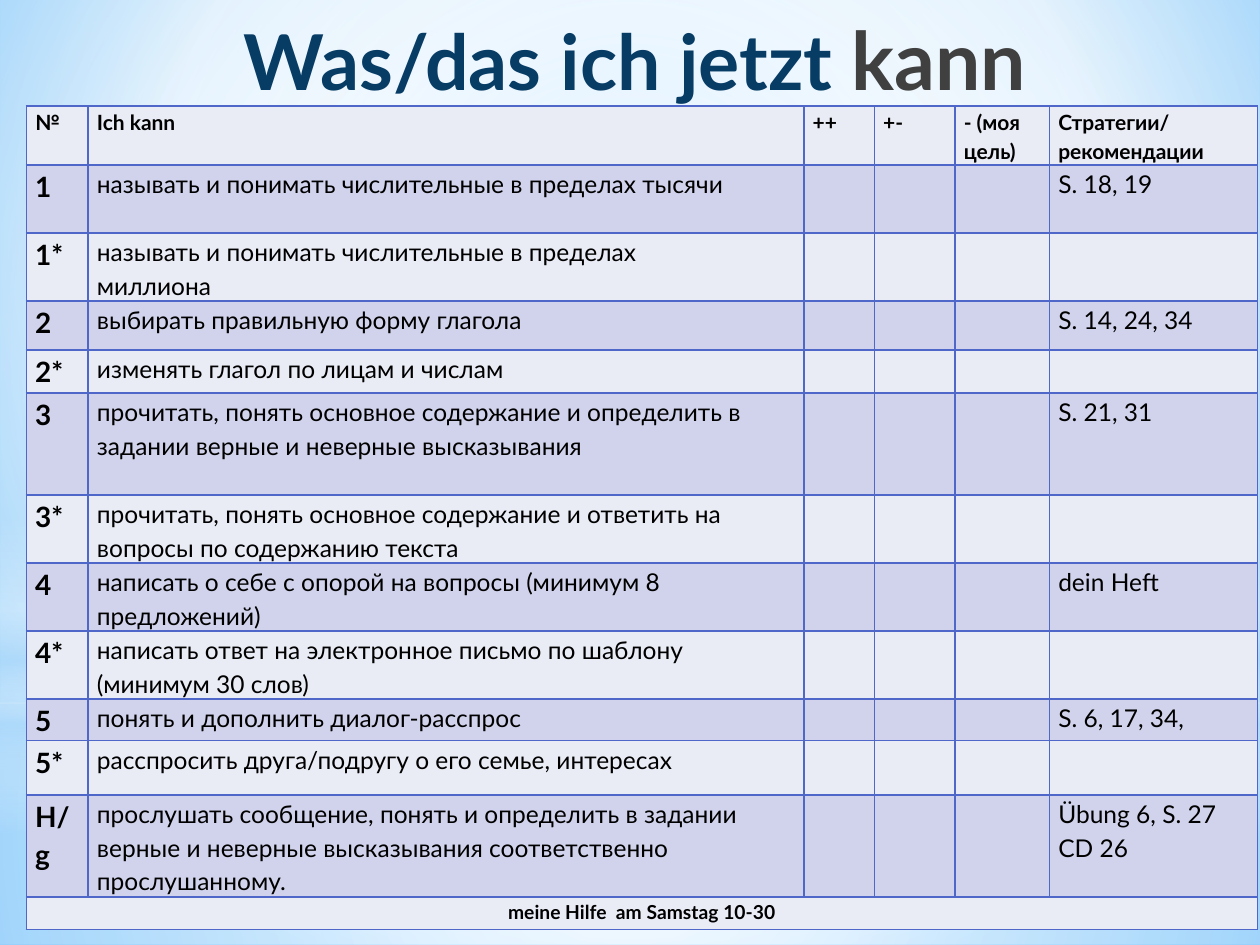
from lxml import etree
from pptx import Presentation, util as u
from pptx.dml.color import RGBColor
from pptx.enum import shapes, text
from pptx.oxml import parse_xml
from pptx.oxml.ns import nsdecls, qn

W, H = 10, 7.5
FONT = "Lato"
HEX = {
    "white": "FFFFFF", "pale": "B4DCFA", "sky": "9ED5FF", "deep": "5BB9FF",
    "navy": "073C65", "gray": "404040", "ink": "000000",
    "rule": "4E67C8", "light": "E9EBF5", "band": "D0D3EB",
}
MID = (50, 50, 50, 50)

# Glow layers: shape, box in percent of the slide, stops (place, colour, alpha), focus
GLOWS = [
    ("RECTANGLE", (0, 74.4, 100, 25.6),
     [(0, "white", 91), (37, "white", 76), (100, "pale", 79)], MID),
    ("RECTANGLE", (0, 0, 100, 74.4),
     [(0, "white", 89), (48, "white", 62), (100, "pale", 79)], MID),
    ("RECTANGLE", (0, 54.93, 100, 33.33),
     [(0, "white", 0), (29, "white", 30), (45, "pale", 40),
      (55, "white", 26), (65, "pale", 60), (100, "white", 0)], None),
    ("OVAL", (0, 23.33, 100, 74.4),
     [(0, "white", 100), (56, "white", 0)], MID),
]

COLS = [49, 568, 56, 64, 75, 165]
ROWS = [47, 54, 54, 39, 34, 81, 54, 54, 54, 33, 43, 81, 26]
HEAD = ["№", "Ich kann", "++", "+-", "- (моя цель)", "Стратегии/\nрекомендации"]
# Number, skill, pages to study
SKILLS = [
    ("1", "называть и понимать числительные в пределах тысячи", "S. 18, 19"),
    ("1*", "называть и понимать числительные в пределах\nмиллиона", ""),
    ("2", "выбирать правильную форму глагола", "S. 14, 24, 34"),
    ("2*", "изменять глагол по лицам и числам", ""),
    ("3", "прочитать, понять основное содержание и определить в задании "
          "верные и неверные высказывания", "S. 21, 31"),
    ("3*", "прочитать, понять основное содержание и ответить на вопросы "
           "по содержанию текста", ""),
    ("4", "написать о себе c опорой на вопросы (минимум 8 предложений)", "dein Heft"),
    ("4*", "написать ответ на электронное письмо по шаблону (минимум 30 слов)", ""),
    ("5", "понять и дополнить диалог-расспрос", "S. 6, 17, 34,"),
    ("5*", "расспросить друга/подругу о его семье, интересах", ""),
    ("H/g", "прослушать сообщение, понять и определить в задании верные и "
            "неверные высказывания соответственно прослушанному.",
     "Übung 6, S. 27 CD 26"),
]
FOOT = "meine Hilfe  am Samstag 10-30"


def place(box):
    """Turn percent of the slide into lengths."""
    return [u.Inches(part * side / 100) for part, side in zip(box, (W, H, W, H))]


def color(name):
    return RGBColor.from_string(HEX[name])


def style(run, size, bold, name="ink"):
    font = run.font
    font.name, font.size, font.bold = FONT, u.Pt(size), bold
    font.color.rgb = color(name)


def blend(fill, root, stops, focus):
    """Set a gradient: round when it has a focus, else from top to bottom."""
    fill.solid()
    old = root.find(qn("a:solidFill"))
    marks = "".join(
        f'<a:gs pos="{spot * 1000}"><a:srgbClr val="{HEX[name]}">'
        f'<a:alpha val="{alpha * 1000}"/></a:srgbClr></a:gs>'
        for spot, name, alpha in stops)
    if focus:
        sides = " ".join(f'{k}="{v * 1000}"' for k, v in zip("ltrb", focus))
        way = f'<a:path path="circle"><a:fillToRect {sides}/></a:path>'
    else:
        way = '<a:lin ang="5400000" scaled="0"/>'
    new = parse_xml(f'<a:gradFill {nsdecls("a")} rotWithShape="1">'
                    f'<a:gsLst>{marks}</a:gsLst>{way}</a:gradFill>')
    root.replace(old, new)


def backdrop(slide):
    fill = slide.background.fill
    fill.solid()
    root = slide.element.find(".//" + qn("p:bgPr"))
    blend(fill, root, [(0, "sky", 100), (60, "white", 100), (100, "deep", 100)],
          (20, 10, 20, 60))
    for kind, box, stops, focus in GLOWS:
        glow = slide.shapes.add_shape(shapes.MSO_SHAPE[kind], *place(box))
        glow.shadow.inherit = False
        glow.line.fill.background()
        blend(glow.fill, glow.element.spPr, stops, focus)


def heading(slide, box):
    title = slide.shapes.title
    slide.shapes.element.append(title.element)  # in front of the glows
    title.left, title.top, title.width, title.height = place(box)
    frame = title.text_frame
    frame.auto_size = text.MSO_AUTO_SIZE.NONE
    frame.vertical_anchor = text.MSO_ANCHOR.TOP
    para = frame.paragraphs[0]
    para.alignment = text.PP_ALIGN.CENTER
    for words, size, name in [("Was/das ich jetzt ", 44, "navy"), ("kann", 46, "gray")]:
        run = para.add_run()
        run.text = words
        style(run, size, True, name)


def border(cell):
    props = cell._tc.get_or_add_tcPr()
    for spot, side in enumerate("LRTB"):
        props.insert(spot, parse_xml(
            f'<a:ln{side} {nsdecls("a")} w="{u.Pt(1)}"><a:solidFill>'
            f'<a:srgbClr val="{HEX["rule"]}"/></a:solidFill></a:ln{side}>'))


def write(cell, words, size, bold, shade):
    cell.margin_left = cell.margin_right = u.Inches(0.07)
    cell.margin_top = cell.margin_bottom = 0
    cell.fill.solid()
    cell.fill.fore_color.rgb = color(shade)
    border(cell)
    cell.text_frame.text = words
    for para in cell.text_frame.paragraphs:
        para.line_spacing = 1.15
        for run in para.runs:
            style(run, size, bold)
        if not words:  # keeps an empty cell from stretching its row
            etree.SubElement(para._p, qn("a:endParaRPr"), sz=str(size * 100))


def checklist(slide, box):
    left, top, width, height = place(box)
    table = slide.shapes.add_table(len(ROWS), len(COLS), left, top, width, height).table
    table.first_row = table.horz_banding = False
    for col, part in zip(table.columns, COLS):
        col.width = int(width * part / sum(COLS))
    for row, part in zip(table.rows, ROWS):
        row.height = int(height * part / sum(ROWS))

    lines = [HEAD] + [[num, skill, "", "", "", pages] for num, skill, pages in SKILLS]
    lines.append([FOOT] + [""] * 5)
    last = len(lines) - 1
    for r, line in enumerate(lines):
        for c, words in enumerate(line):
            size = 12 if r == 0 else 11 if r == last else 16 if c == 0 else 14
            write(table.cell(r, c), words, size, r in (0, last) or c == 0,
                  "band" if r % 2 else "light")

    # Closing line across all columns
    foot = table.cell(last, 0)
    foot.merge(table.cell(last, len(COLS) - 1))
    foot.text_frame.paragraphs[0].alignment = text.PP_ALIGN.CENTER


def main():
    deck = Presentation()
    deck.slide_width, deck.slide_height = u.Inches(W), u.Inches(H)
    slide = deck.slides.add_slide(deck.slide_layouts[5])
    backdrop(slide)
    heading(slide, (16.9, 0.4, 67, 10.27))
    checklist(slide, (2.1, 11.2, 97.7, 87.2))
    deck.save("out.pptx")


if __name__ == "__main__":
    main()
